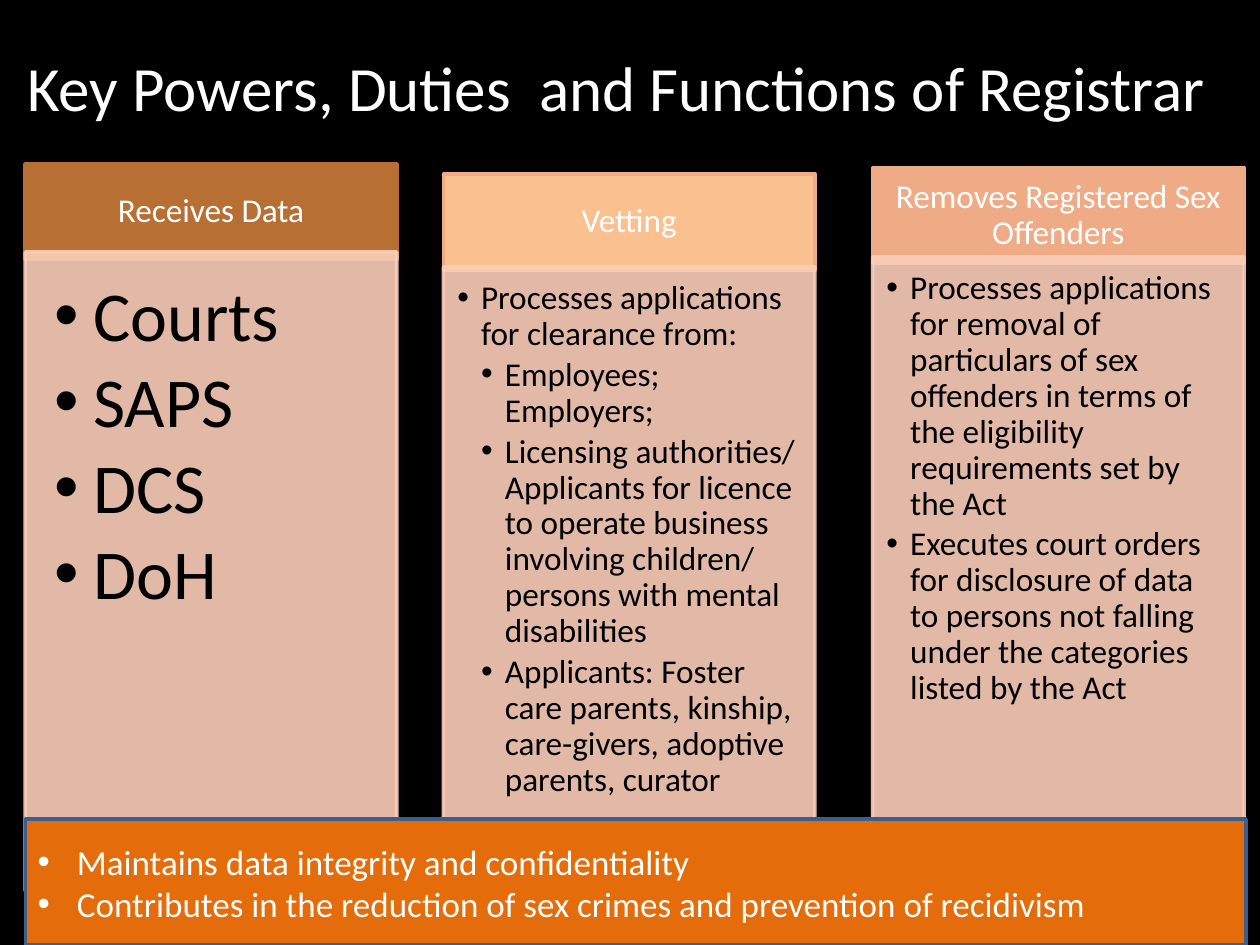
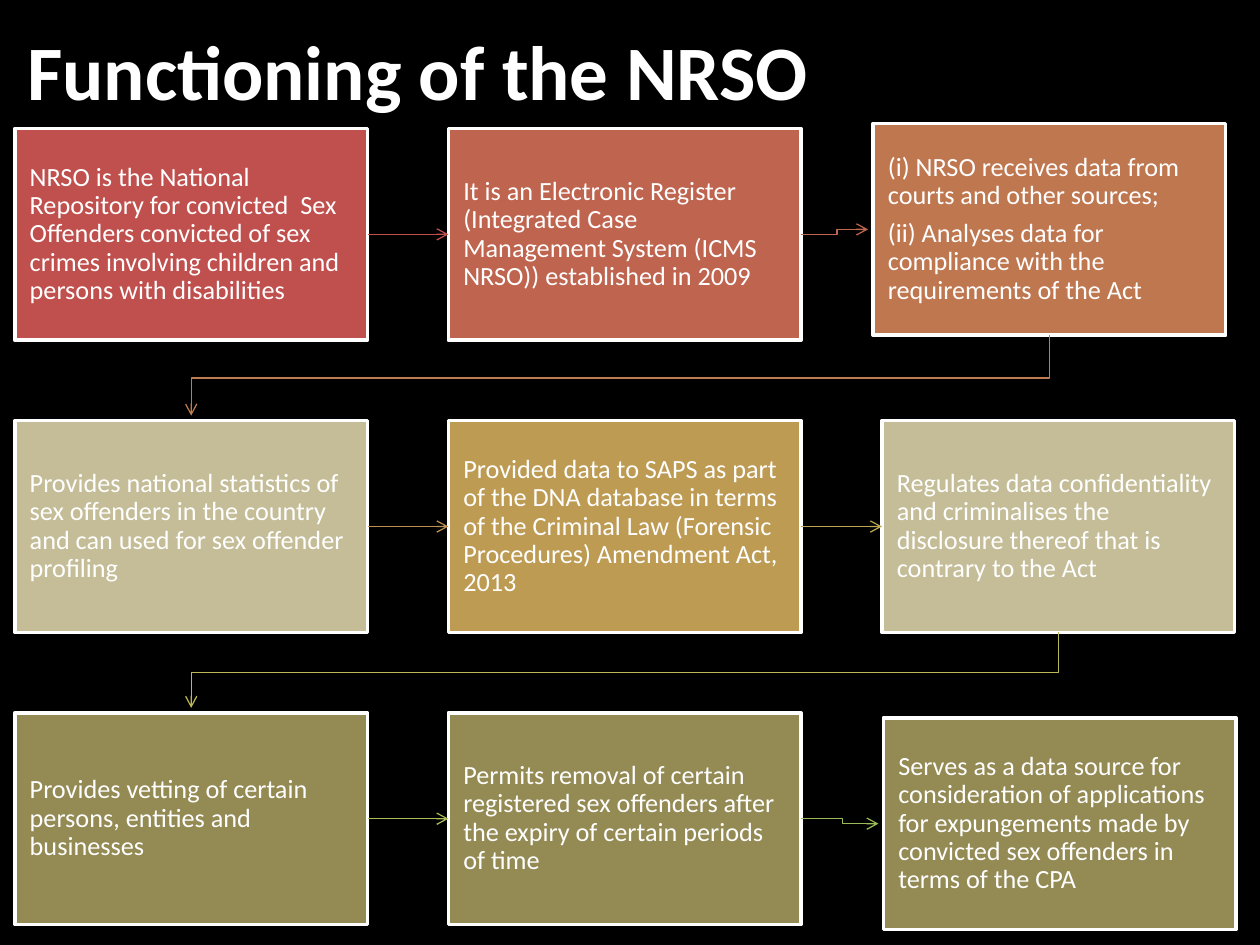
from dataclasses import dataclass
from lxml import etree
from pptx import Presentation
from pptx.dml.color import RGBColor
from pptx.enum.shapes import MSO_CONNECTOR, MSO_SHAPE
from pptx.enum.text import MSO_ANCHOR, MSO_AUTO_SIZE, PP_ALIGN
from pptx.oxml.ns import qn
from pptx.util import Cm, Pt

RECT = MSO_SHAPE.RECTANGLE
STRAIGHT = MSO_CONNECTOR.STRAIGHT
TOP, MIDDLE = MSO_ANCHOR.TOP, MSO_ANCHOR.MIDDLE
LEFT, CENTER = PP_ALIGN.LEFT, PP_ALIGN.CENTER
FIXED = MSO_AUTO_SIZE.NONE
LEFT_SIDE, RIGHT_SIDE = 1, 3


@dataclass(frozen=True)
class Theme:
    font: str = "Calibri"
    black: str = "000000"
    white: str = "FFFFFF"
    brown: str = "B76F34"
    sand: str = "FAC090"
    peach: str = "EFAB85"
    pale: str = "FBCEB9"
    orange: str = "E46C0A"
    navy: str = "3A5F8C"
    red: str = "C0504D"
    brick: str = "BF644F"
    rust: str = "BF7750"
    khaki: str = "C4BD97"
    gold: str = "BD9B53"
    olive: str = "948A54"
    arrows: tuple = ("C0504D", "BF674F", "BF7C50", "BE9152",
                     "BDA554", "BCB856", "AEBC57", "9BBB59")
    title: int = 36
    strong: int = 44
    big: int = 40
    band: int = 20
    panel: int = 19
    step: int = 15
    edge: float = 2
    thin: float = 0.75


def rgb(code):
    return RGBColor.from_string(code)


def fill_text(shape, lines, font, size, color, bold=False, align=LEFT, anchor=MIDDLE,
              pad=(0.25, 0.13, 0.25, 0.13), lead=0.9, after=0, indent=0):
    frame = shape.text_frame
    frame.word_wrap = True
    frame.auto_size = FIXED
    frame.vertical_anchor = anchor
    (frame.margin_left, frame.margin_top,
     frame.margin_right, frame.margin_bottom) = map(Cm, pad)
    for i, line in enumerate(lines):
        text, level = line if isinstance(line, tuple) else (line, 0)
        para = frame.paragraphs[0] if i == 0 else frame.add_paragraph()
        para.level = level
        para.alignment = align
        para.line_spacing = lead
        para.space_before = Pt(0)
        para.space_after = Pt(size * after)
        if indent:
            props = para._p.get_or_add_pPr()
            props.set("marL", str(Cm(indent * (level + 1))))
            props.set("indent", str(Cm(-indent)))
            etree.SubElement(props, qn("a:buFont"), typeface="Arial")
            etree.SubElement(props, qn("a:buChar"), char="•")
        run = para.add_run()
        run.text = text
        run.font.name = font
        run.font.size = Pt(size)
        run.font.bold = bold
        run.font.color.rgb = rgb(color)


class Deck:
    def __init__(self, theme):
        self.theme = theme
        self.show = Presentation()
        self.show.slide_width, self.show.slide_height = Cm(25.4), Cm(19.05)
        back = self.show.slide_master.background.fill
        back.solid()
        back.fore_color.rgb = rgb(theme.black)

    def start(self, layout):
        self.slide = self.show.slides.add_slide(self.show.slide_layouts[layout])
        self.shapes = self.slide.shapes

    def place(self, shape, area):
        shape.left, shape.top, shape.width, shape.height = map(Cm, area)

    def paint(self, shape, fill, line):
        shape.fill.solid()
        shape.fill.fore_color.rgb = rgb(fill)
        shape.line.color.rgb = rgb(line)
        shape.line.width = Pt(self.theme.edge)

    def text(self, shape, lines, color=None, **style):
        fill_text(shape, lines, font=self.theme.font,
                  color=color or self.theme.white, **style)

    def title(self, text, area, **style):
        self.place(self.shapes.title, area)
        self.text(self.shapes.title, [text], lead=1, **style)

    def band(self, lines, area):
        body = self.slide.placeholders[1]
        self.place(body, area)
        self.paint(body, self.theme.orange, self.theme.navy)
        self.text(body, lines, size=self.theme.band, lead=1, indent=0.79)
        self.shapes._spTree.append(body._element)

    def box(self, lines, area, fill, line, alpha=100, **style):
        shape = self.shapes.add_shape(RECT, *map(Cm, area))
        shape.shadow.inherit = False
        self.paint(shape, fill, line)
        if alpha < 100:
            for tint in shape._element.spPr.iter(qn("a:srgbClr")):
                etree.SubElement(tint, qn("a:alpha"), val=str(alpha * 1000))
        self.text(shape, lines, **style)
        return shape

    def tip(self, shape, color):
        shape.line.color.rgb = rgb(color)
        shape.line.width = Pt(self.theme.thin)
        edge = shape._element.spPr.find(qn("a:ln"))
        etree.SubElement(edge, qn("a:tailEnd"), type="arrow")

    def arrow(self, start, end, color):
        y = start.top + start.height // 2
        link = self.shapes.add_connector(STRAIGHT, start.left + start.width, y, end.left, y)
        link.begin_connect(start, RIGHT_SIDE)
        link.end_connect(end, LEFT_SIDE)
        self.tip(link, color)
        etree.SubElement(link._element.spPr, qn("a:effectLst"))

    def bend(self, points, color):
        pen = self.shapes.build_freeform(*points[0], scale=1.0)
        pen.add_line_segments(points[1:], close=False)
        shape = pen.convert_to_shape()
        shape.shadow.inherit = False
        shape.fill.background()
        self.tip(shape, color)

    def jog(self, start, end, color):
        x, y = start.left + start.width, start.top + start.height // 2
        stop, level = end.left - Cm(0.1), end.top + end.height // 2
        mid = (x + end.left) // 2
        self.bend([(x, y), (mid, y), (mid, level), (stop, level)], color)

    def turn(self, start, end, color):
        x, y = start.left + start.width // 2, start.top + start.height
        goal = end.left + end.width // 2
        mid = (y + end.top) // 2
        self.bend([(x, y), (x, mid), (goal, mid), (goal, end.top - Cm(0.1))], color)


def powers(deck):
    look = deck.theme
    deck.start(1)
    deck.title("Key Powers, Duties  and Functions of Registrar",
               (0.3, 0.76, 24.8, 1.96), size=look.title)
    small = dict(size=look.panel, pad=(0.28, 0.28, 0.38, 0.43), indent=0.48)
    large = dict(size=look.big, pad=(0.58, 0.58, 0.79, 0.9), indent=0.79)
    panels = [
        ("Receives Data", 0.51, 3.3, 5.08, 12.88, look.brown, look.brown, large,
         ["Courts", "SAPS", "DCS", "DoH"]),
        ("Vetting", 8.94, 3.51, 5.38, 12.57, look.sand, look.peach, small,
         ["Processes applications for clearance from:",
          ("Employees; Employers;", 1),
          ("Licensing authorities/ Applicants for licence to operate business "
           "involving children/ persons with mental disabilities", 1),
          ("Applicants: Foster care parents, kinship, care-givers, adoptive "
           "parents, curator", 1)]),
        ("Removes Registered Sex Offenders", 17.59, 3.38, 5.18, 12.57,
         look.peach, look.peach, small,
         ["Processes applications for removal of particulars of sex offenders "
          "in terms of the eligibility requirements set by the Act",
          "Executes court orders for disclosure of data to persons not falling "
          "under the categories listed by the Act"]),
    ]
    wide = 7.49
    for head, x, top, base, high, fill, line, style, lines in panels:
        deck.box([head], (x, top, wide, 1.93), fill, line, size=look.panel,
                 align=CENTER, pad=(0.38, 0.2, 0.38, 0.2))
        deck.box(lines, (x, base, wide, high), look.pale, look.pale, alpha=90,
                 color=look.black, anchor=TOP, after=0.15, **style)
    deck.band(["Maintains data integrity and confidentiality",
               "Contributes in the reduction of sex crimes and prevention of recidivism"],
              (0.51, 16.51, 24.61, 2.54))


def flow(deck):
    look = deck.theme
    deck.start(5)
    deck.title("Functioning of the NRSO", (0.3, 0.33, 24.41, 2.16),
               size=look.strong, bold=True)
    steps = [
        (look.red, ["NRSO is the National Repository for convicted  Sex Offenders "
                    "convicted of sex crimes involving children and persons with "
                    "disabilities"]),
        (look.brick, ["It is an Electronic Register (Integrated Case Management "
                      "System (ICMS NRSO)) established in 2009"]),
        (look.rust, ["(i) NRSO receives data from courts and other sources;",
                     "(ii) Analyses data for compliance with the requirements "
                     "of the Act"]),
        (look.khaki, ["Provides national statistics of sex offenders in the country "
                      "and can used for sex offender profiling"]),
        (look.gold, ["Provided data to SAPS as part of the DNA database in terms of "
                     "the Criminal Law (Forensic Procedures) Amendment Act, 2013"]),
        (look.khaki, ["Regulates data confidentiality and criminalises the "
                      "disclosure thereof that is contrary to the Act"]),
        (look.olive, ["Provides vetting of certain persons, entities and businesses"]),
        (look.olive, ["Permits removal of certain registered sex offenders after "
                      "the expiry of certain periods of time"]),
        (look.olive, ["Serves as a data source for consideration of applications "
                      "for expungements made by convicted sex offenders in terms "
                      "of the CPA"]),
    ]
    shifts = {2: (-0.18, -0.1), 8: (0.03, 0.1)}
    boxes = []
    for i, (fill, lines) in enumerate(steps):
        row, col = divmod(i, 3)
        dx, dy = shifts.get(i, (0, 0))
        area = (0.3 + col * 8.74 + dx, 2.59 + row * 5.89 + dy, 7.11, 4.27)
        boxes.append(deck.box(lines, area, fill, look.white, size=look.step,
                              pad=(0.3,) * 4, after=0.35))
    for i, color in enumerate(look.arrows):
        start, end = boxes[i:i + 2]
        if i % 3 == 2:
            deck.turn(start, end, color)
        elif start.top == end.top:
            deck.arrow(start, end, color)
        else:
            deck.jog(start, end, color)


def main():
    deck = Deck(Theme())
    powers(deck)
    flow(deck)
    deck.show.save("out.pptx")


if __name__ == "__main__":
    main()
